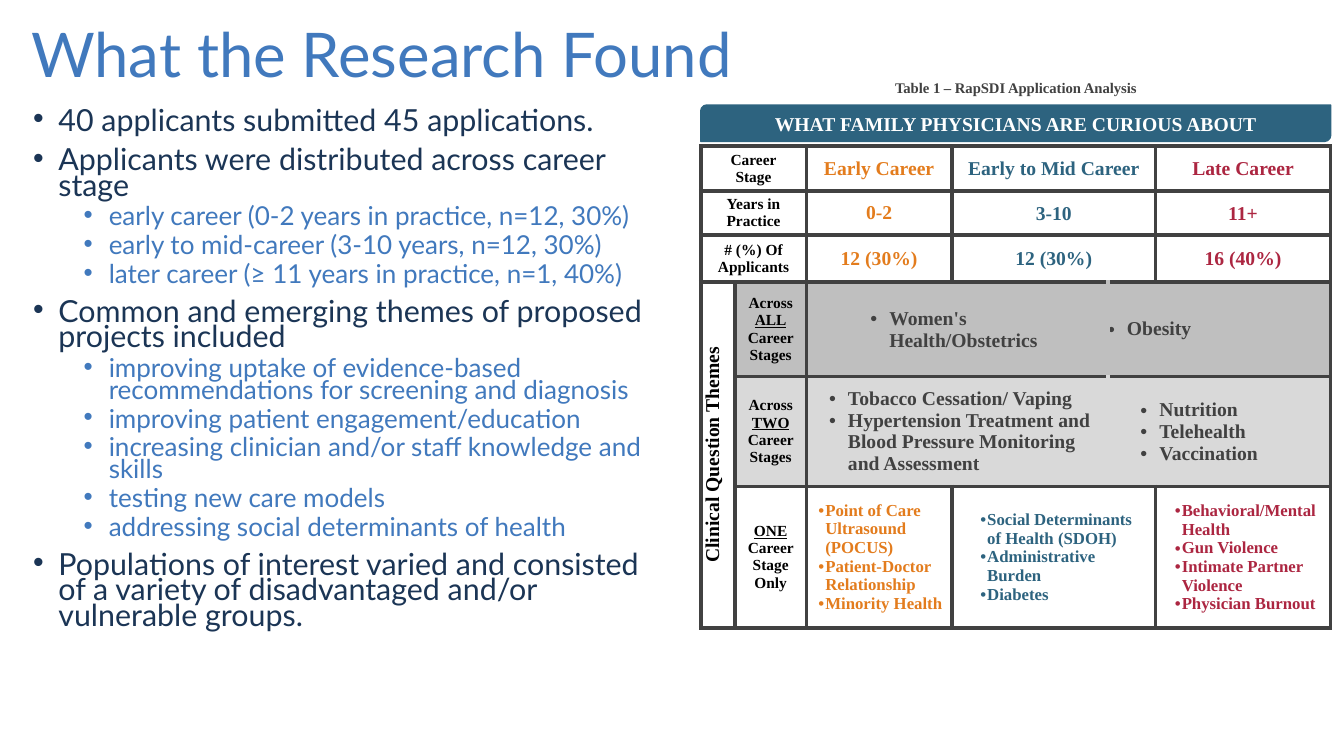
from dataclasses import dataclass

from lxml import etree
from pptx import Presentation
from pptx.dml.color import RGBColor
from pptx.enum import shapes, text
from pptx.oxml import ns
from pptx.util import Pt


@dataclass(frozen=True)
class Theme:
    sans: str = "Lato"
    serif: str = "Times New Roman"
    blue: str = "4179BD"
    navy: str = "1B3555"
    teal: str = "2D637F"
    orange: str = "E37C1D"
    red: str = "AC2641"
    dark: str = "414141"
    black: str = "000000"
    white: str = "FFFFFF"
    gray: str = "BFBFBF"
    light: str = "D9D9D9"
    title: float = 44
    body: float = 21.7
    sub_body: float = 18.6
    heading: float = 14
    detail: float = 12
    label: float = 11
    caption: float = 10.5
    border: float = 3


THEME = Theme()

# Cell margins: left, top, right, bottom
TIGHT = (0, 0, 0, 0)
SLIM = (0.7, 0.7, 0.7, 0)
ROOMY = (7.2, 3.6, 7.2, 3.6)

FINDINGS = [
    (0, "40 applicants submitted 45 applications."),
    (0, "Applicants were distributed across career stage"),
    (1, "early career (0-2 years in practice, n=12, 30%)"),
    (1, "early to mid-career (3-10 years, n=12, 30%)"),
    (1, "later career (≥ 11 years in practice, n=1, 40%)"),
    (0, "Common and emerging themes of proposed projects included"),
    (1, "improving uptake of evidence-based recommendations for screening and diagnosis"),
    (1, "improving patient engagement/education"),
    (1, "increasing clinician and/or staff knowledge and skills"),
    (1, "testing new care models"),
    (1, "addressing social determinants of health"),
    (0, "Populations of interest varied and consisted of a variety of "
        "disadvantaged and/or vulnerable groups."),
]

STAGE_ROWS = [
    (["Career", "Stage"], "Early Career", "Early to Mid Career", "Late Career"),
    (["Years in Practice"], "0-2", "3-10", "11+"),
    (["# (%) Of Applicants"], "12 (30%)", "12 (30%)", "16 (40%)"),
]


class ResearchSlide:
    def __init__(self, theme):
        self.theme = theme
        self.presentation = Presentation()
        self.presentation.slide_width = Pt(960)
        self.presentation.slide_height = Pt(540)
        self.slide = self.presentation.slides.add_slide(self.presentation.slide_layouts[1])

    def place(self, shape, left, top, width, height):
        shape.left, shape.top = Pt(left), Pt(top)
        shape.width, shape.height = Pt(width), Pt(height)

    def format_font(self, font, name, size, color, bold=False):
        font.name, font.size, font.bold = name, Pt(size), bold
        font.color.rgb = RGBColor.from_string(color)

    def add_bullet(self, paragraph, margin, hang):
        properties = paragraph._p.get_or_add_pPr()
        properties.set("marL", str(Pt(margin)))
        properties.set("indent", str(Pt(-hang)))
        etree.SubElement(properties, ns.qn("a:buFont")).set("typeface", "Arial")
        etree.SubElement(properties, ns.qn("a:buChar")).set("char", "•")

    def add_title(self, wording, box):
        title = self.slide.shapes.title
        self.place(title, *box)
        title.text_frame.text = wording
        title.text_frame.auto_size = text.MSO_AUTO_SIZE.NONE
        title.text_frame.vertical_anchor = text.MSO_ANCHOR.MIDDLE
        paragraph = title.text_frame.paragraphs[0]
        paragraph.alignment = text.PP_ALIGN.LEFT
        paragraph.line_spacing = 0.9
        self.format_font(paragraph.runs[0].font, self.theme.sans, self.theme.title, self.theme.blue)

    def add_list(self, items, box):
        body = self.slide.placeholders[1]
        self.place(body, *box)
        frame = body.text_frame
        frame.text = "\n".join(wording for _, wording in items)
        frame.auto_size = text.MSO_AUTO_SIZE.NONE
        styles = [(18, 10, self.theme.body, self.theme.navy),
                  (54, 5, self.theme.sub_body, self.theme.blue)]
        for index, (paragraph, (level, _)) in enumerate(zip(frame.paragraphs, items)):
            margin, before, size, color = styles[level]
            paragraph.level = level
            self.add_bullet(paragraph, margin, 18)
            paragraph.line_spacing = 0.7
            paragraph.space_before = Pt(before if index else 0)
            self.format_font(paragraph.runs[0].font, self.theme.sans, size, color)

    def style_line(self, frame, size, color):
        """Centre a single bold serif line."""
        paragraph = frame.paragraphs[0]
        paragraph.alignment = text.PP_ALIGN.CENTER
        self.format_font(paragraph.runs[0].font, self.theme.serif, size, color, True)

    def add_caption(self, wording, box):
        frame = self.slide.shapes.add_textbox(*map(Pt, box)).text_frame
        frame.text = wording
        frame.word_wrap = False
        self.style_line(frame, self.theme.caption, self.theme.dark)

    def add_banner(self, wording, box):
        banner = self.slide.shapes.add_shape(
            shapes.MSO_SHAPE.ROUND_2_DIAG_RECTANGLE, *map(Pt, box))
        banner.shadow.inherit = False
        banner.fill.solid()
        banner.fill.fore_color.rgb = RGBColor.from_string(self.theme.teal)
        banner.line.color.rgb = RGBColor.from_string(self.theme.teal)
        banner.line.width = Pt(1)
        banner.text_frame.text = wording
        banner.text_frame.word_wrap = True
        banner.text_frame.vertical_anchor = text.MSO_ANCHOR.MIDDLE
        self.style_line(banner.text_frame, self.theme.heading, self.theme.white)

    def add_table(self, left, top, columns, rows):
        frame = self.slide.shapes.add_table(
            len(rows), len(columns), Pt(left), Pt(top), Pt(sum(columns)), Pt(sum(rows)))
        self.table = frame.table
        self.table.first_row = self.table.horz_banding = False
        for column, width in zip(self.table.columns, columns):
            column.width = Pt(width)
        for row, height in zip(self.table.rows, rows):
            row.height = Pt(height)

    def frame_cell(self, cell, fill, seam):
        """Fill a cell and draw its borders; the seam side takes the fill colour."""
        if fill:
            cell.fill.solid()
            cell.fill.fore_color.rgb = RGBColor.from_string(fill)
        else:
            cell.fill.background()
        properties = cell._tc.get_or_add_tcPr()
        for index, side in enumerate("LRTB"):
            line = etree.Element(ns.qn(f"a:ln{side}"), w=str(Pt(self.theme.border)))
            solid = etree.SubElement(line, ns.qn("a:solidFill"))
            color = fill if side == seam else self.theme.dark
            etree.SubElement(solid, ns.qn("a:srgbClr")).set("val", color)
            properties.insert(index, line)

    def fill_cell(self, row, column, lines, size, color, margins=TIGHT, span=(1, 1),
                  fill=None, seam=None, bullet=None):
        """Write lines into a cell; words between underscores are underlined."""
        cell = self.table.cell(row, column)
        last_row, last_column = row + span[0], column + span[1]
        if span != (1, 1):
            cell.merge(self.table.cell(last_row - 1, last_column - 1))
        for y in range(row, last_row):
            for x in range(column, last_column):
                self.frame_cell(self.table.cell(y, x), fill, seam)
        cell.vertical_anchor = text.MSO_ANCHOR.MIDDLE
        cell.margin_left, cell.margin_top, cell.margin_right, cell.margin_bottom = map(Pt, margins)
        cell.text_frame.text = "\n".join(lines)
        for paragraph, wording in zip(cell.text_frame.paragraphs, lines):
            if bullet:
                self.add_bullet(paragraph, *bullet)
            else:
                paragraph.alignment = text.PP_ALIGN.CENTER
            paragraph.text = ""
            for index, part in enumerate(wording.split("_")):
                if part:
                    run = paragraph.add_run()
                    run.text = part
                    self.format_font(run.font, self.theme.serif, size, color, True)
                    run.font.underline = index % 2 == 1
        return cell


def main():
    page, theme = ResearchSlide(THEME), THEME
    page.add_title("What the Research Found", (15, 8.5, 828, 65))
    page.add_list(FINDINGS, (16.5, 75.5, 463.5, 394.5))
    page.add_table(500.5, 104.5, (24.5, 51, 104, 111.5, 34, 125),
                   (31.5, 31.5, 33.5, 67.5, 78.5, 101))

    for row, (label, early, middle, late) in enumerate(STAGE_ROWS):
        page.fill_cell(row, 0, label, theme.label, theme.black, ROOMY, (1, 2))
        page.fill_cell(row, 2, [early], theme.heading, theme.orange)
        page.fill_cell(row, 3, [middle], theme.heading, theme.teal, SLIM, (1, 2))
        page.fill_cell(row, 5, [late], theme.heading, theme.red, SLIM)

    themes = page.fill_cell(3, 0, ["Clinical Question Themes"], theme.heading, theme.black,
                            SLIM, (3, 1))
    themes._tc.get_or_add_tcPr().set("vert", "vert270")
    scopes = [("Across _ALL_ Career Stages", theme.gray),
              ("Across _TWO_ Career Stages", theme.light), ("_ONE_ Career Stage Only", None)]
    for row, (scope, fill) in enumerate(scopes, 3):
        page.fill_cell(row, 1, [scope], theme.label, theme.black, fill=fill)

    shared = [
        (3, 2, ["Women's Health/Obstetrics"], SLIM, 58.5),
        (3, 4, ["Obesity"], TIGHT, 13.5),
        (4, 2, ["Tobacco Cessation/ Vaping",
                "Hypertension Treatment and Blood Pressure Monitoring and Assessment"], ROOMY, 22.5),
        (4, 4, ["Nutrition", "Telehealth", "Vaccination"], SLIM, 36),
    ]
    for row, column, topics, margins, indent in shared:
        page.fill_cell(row, column, topics, theme.heading, theme.dark, margins, (1, 2),
                       scopes[row - 3][1], "R" if column == 2 else "L", (indent, 13.5))

    single = [
        (2, ["Point of Care Ultrasound (POCUS)", "Patient-Doctor Relationship",
             "Minority Health"], theme.orange, TIGHT, 1, 13.5),
        (3, ["Social Determinants of Health (SDOH)", "Administrative Burden", "Diabetes"],
         theme.teal, ROOMY, 2, 18),
        (5, ["Behavioral/Mental Health", "Gun Violence", "Intimate Partner Violence",
             "Physician Burnout"], theme.red, SLIM, 1, 18),
    ]
    for column, topics, color, margins, width, indent in single:
        page.fill_cell(5, column, topics, theme.detail, color, margins, (1, width),
                       bullet=(indent, 5))

    page.add_caption("Table 1 – RapSDI Application Analysis", (631.5, 52.5, 188.5, 20))
    page.add_banner("WHAT FAMILY PHYSICIANS ARE CURIOUS ABOUT", (500.5, 75, 450, 26))
    page.presentation.save("out.pptx")


if __name__ == "__main__":
    main()
